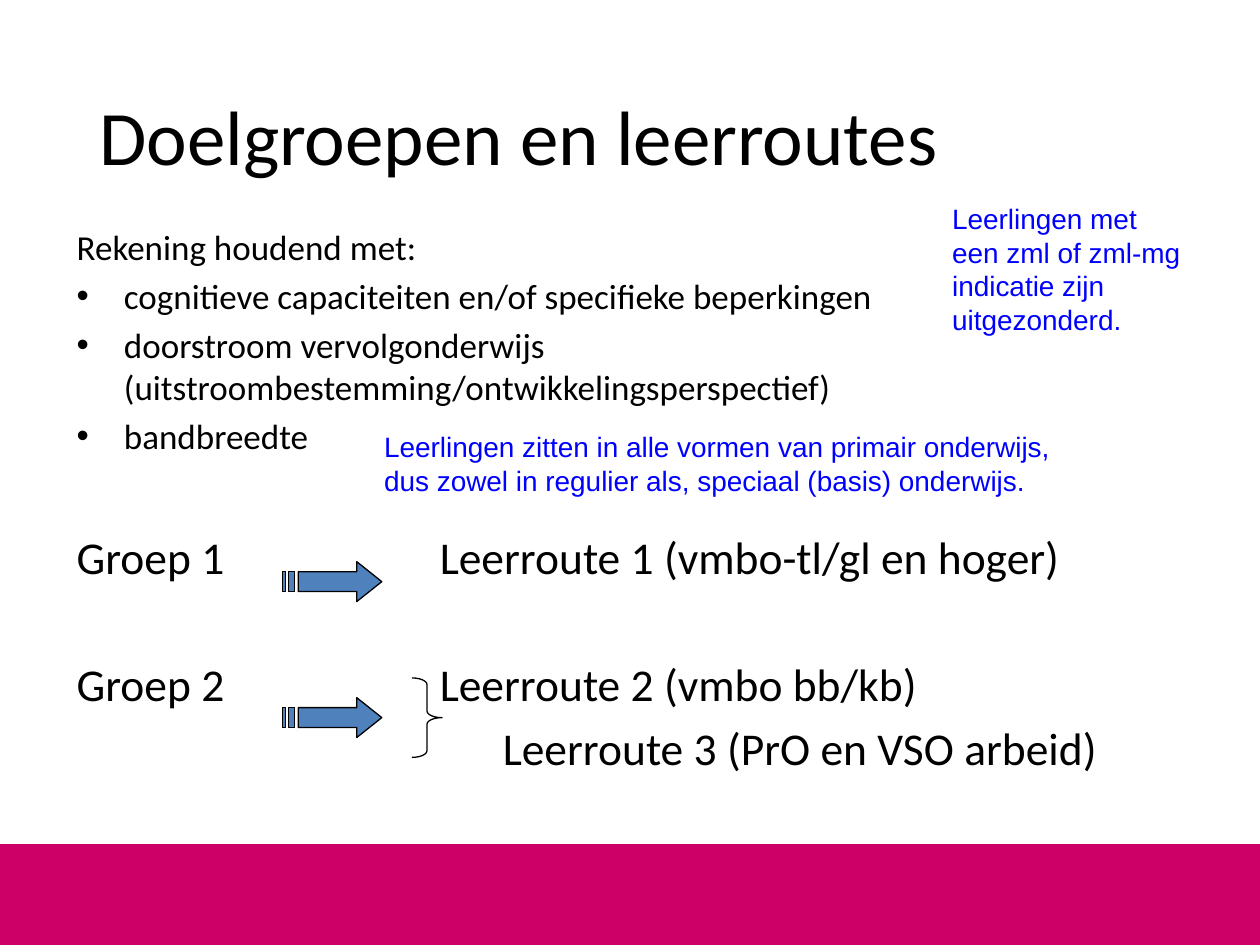
from lxml import etree
from pptx import Presentation
from pptx.dml.color import RGBColor
from pptx.enum.shapes import MSO_SHAPE
from pptx.enum.text import MSO_ANCHOR, PP_ALIGN
from pptx.oxml.ns import qn
from pptx.util import Pt

RECTANGLE, BRACE = MSO_SHAPE.RECTANGLE, MSO_SHAPE.RIGHT_BRACE
TOP, MIDDLE = MSO_ANCHOR.TOP, MSO_ANCHOR.MIDDLE
CENTER = PP_ALIGN.CENTER

BLACK, NOTE_BLUE, ARROW_BLUE, MAGENTA = "000000", "0000FF", "4F81BD", "CC0066"
HANGING = 27
ROUTE_TAB, LAST_ROUTE_TAB = 207.5, 243.5

CRITERIA = [
    "cognitieve capaciteiten en/of specifieke beperkingen",
    "doorstroom vervolgonderwijs (uitstroombestemming/ontwikkelingsperspectief)",
    "bandbreedte",
]
# text, tab stop, space before
ROUTES = [
    ("Groep 1\tLeerroute 1 (vmbo-tl/gl en hoger)", ROUTE_TAB, 41.5),
    ("Groep 2\tLeerroute 2 (vmbo bb/kb)", ROUTE_TAB, 41.5),
    ("\tLeerroute 3 (PrO en VSO arbeid)", LAST_ROUTE_TAB, 5),
]


def color(hex_string):
    return RGBColor.from_string(hex_string)


def add_frame(slide, left, top, width, height, anchor=TOP):
    box = slide.shapes.add_textbox(Pt(left), Pt(top), Pt(width), Pt(height))
    frame = box.text_frame
    frame.word_wrap = True
    frame.vertical_anchor = anchor
    return frame


def add_paragraph(frame, text, size, font="Calibri", ink=BLACK, before=0):
    """Fill the empty first paragraph of the frame, or append a new one."""
    first = frame.paragraphs[0]
    paragraph = frame.add_paragraph() if first.runs else first
    paragraph.space_before = Pt(before)
    run = paragraph.add_run()
    run.text = text
    run.font.size = Pt(size)
    run.font.name = font
    run.font.color.rgb = color(ink)
    return paragraph


def set_bullet(paragraph):
    properties = paragraph._p.get_or_add_pPr()
    properties.set("marL", str(Pt(HANGING)))
    properties.set("indent", str(-Pt(HANGING)))
    etree.SubElement(properties, qn("a:buFont")).set("typeface", "Arial")
    etree.SubElement(properties, qn("a:buChar")).set("char", "•")


def set_tab(paragraph, position):
    stops = etree.SubElement(paragraph._p.get_or_add_pPr(), qn("a:tabLst"))
    stop = etree.SubElement(stops, qn("a:tab"))
    stop.set("pos", str(Pt(position)))
    stop.set("algn", "l")


def style_outline(shape):
    shape.shadow.inherit = False
    shape.line.color.rgb = color(BLACK)
    shape.line.width = Pt(0.75)


def add_footer_bar(slide):
    bar = slide.shapes.add_shape(RECTANGLE, 0, Pt(482.4), Pt(720), Pt(57.6))
    bar.shadow.inherit = False
    bar.fill.solid()
    bar.fill.fore_color.rgb = color(MAGENTA)
    bar.line.fill.background()


def add_striped_arrow(slide, left, top):
    """Arrow whose tail ends in two loose stripes."""
    width, height, head = 56.9, 22.8, 42.6
    upper, lower = height / 4, height * 3 / 4
    contours = [
        [(head, 0), (head, upper), (9.2, upper), (9.2, lower),
         (head, lower), (head, height), (width, height / 2)],
    ]
    for start, end in ((3.6, 7.2), (0, 1.8)):
        contours.append([(start, upper), (start, lower), (end, lower), (end, upper)])

    builder = slide.shapes.build_freeform(Pt(head), 0)
    for contour in contours:
        points = [(Pt(x), Pt(y)) for x, y in contour]
        builder.move_to(*points[0])
        builder.add_line_segments(points[1:], close=True)
    arrow = builder.convert_to_shape(Pt(left), Pt(top))
    style_outline(arrow)
    arrow.fill.solid()
    arrow.fill.fore_color.rgb = color(ARROW_BLUE)


def add_brace(slide):
    brace = slide.shapes.add_shape(BRACE, Pt(235.4), Pt(387.4), Pt(17.2), Pt(45.4))
    brace.adjustments[0] = 0.22
    brace.fill.background()
    style_outline(brace)


def add_note(slide, left, top, width, height, lines):
    frame = add_frame(slide, left, top, width, height)
    for line in lines:
        add_paragraph(frame, line, 16, "Arial", NOTE_BLUE)


def add_body(slide):
    body = add_frame(slide, 36.7, 125.3, 603.4, 346.3)
    add_paragraph(body, "Rekening houdend met:", 20)
    for criterion in CRITERIA:
        set_bullet(add_paragraph(body, criterion, 20, before=4))
    for text, tab, before in ROUTES:
        set_tab(add_paragraph(body, text, 26, before=before), tab)


def main():
    presentation = Presentation()
    presentation.slide_width, presentation.slide_height = Pt(720), Pt(540)
    slide = presentation.slides.add_slide(presentation.slide_layouts[6])

    add_footer_bar(slide)
    title = add_frame(slide, 8.6, 31.7, 576, 90, MIDDLE)
    add_paragraph(title, "Doelgroepen en leerroutes", 44).alignment = CENTER
    add_body(slide)
    for arrow_top in (321, 398.7):
        add_striped_arrow(slide, 161.3, arrow_top)
    add_brace(slide)
    add_note(slide, 212.4, 241.9, 399.6, 94.3, [
        "Leerlingen zitten in alle vormen van primair onderwijs,",
        "dus zowel in regulier als, speciaal (basis) onderwijs.",
    ])
    add_note(slide, 537, 111.6, 150.5, 85, [
        "Leerlingen met een zml of zml-mg indicatie zijn",
        "uitgezonderd.",
    ])
    presentation.save("out.pptx")


if __name__ == "__main__":
    main()
